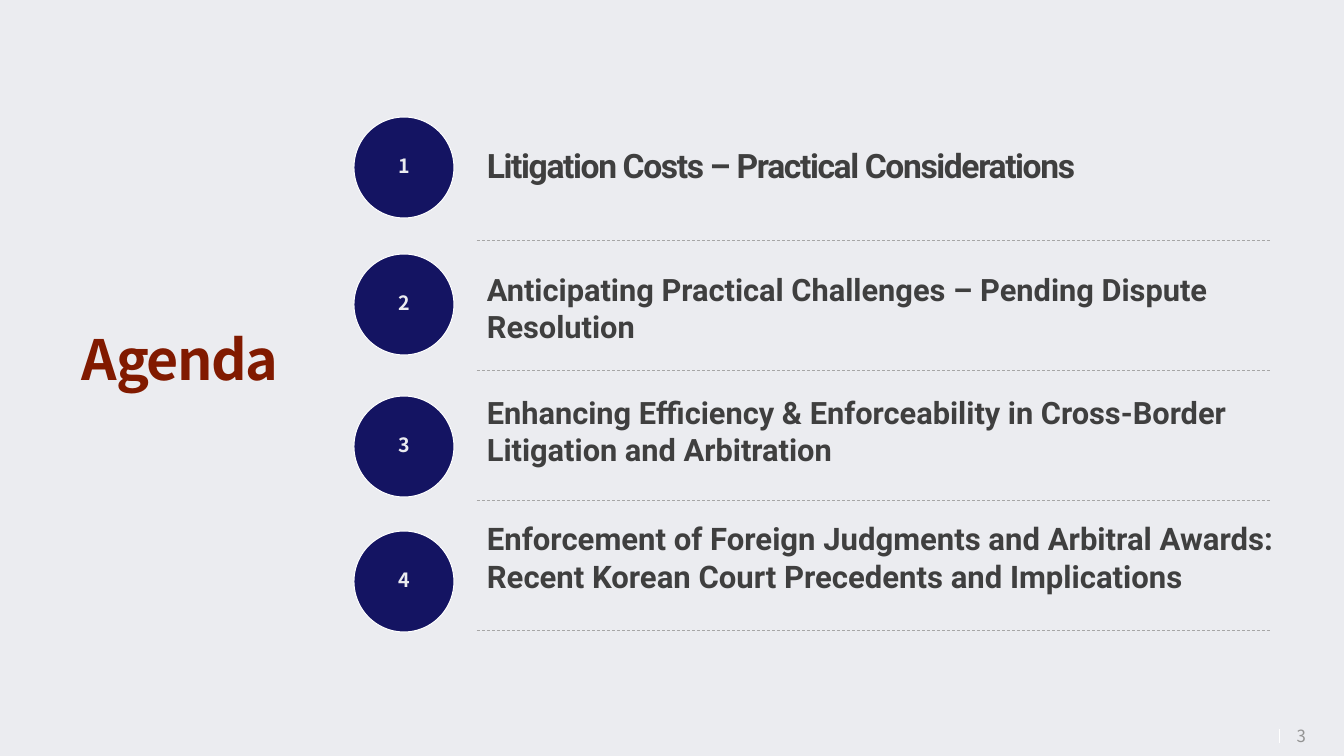
from lxml import etree
from pptx import Presentation
from pptx.dml.color import RGBColor
from pptx.enum.dml import MSO_LINE
from pptx.enum.shapes import MSO_CONNECTOR, MSO_SHAPE
from pptx.enum.text import MSO_ANCHOR, PP_ALIGN
from pptx.oxml.ns import qn
from pptx.util import Pt

PX = 914400 / 100.8
HEADING_FONT, TOPIC_FONT = "Noto Sans CJK KR", "Roboto"
BACKGROUND = RGBColor(0xEB, 0xEC, 0xF0)
WHITE = RGBColor(0xFF, 0xFF, 0xFF)
NAVY = RGBColor(0x14, 0x14, 0x62)
MAROON = RGBColor(0x81, 0x1A, 0x00)
DARK_GREY = RGBColor(0x3F, 0x3F, 0x3F)
RULE_GREY = RGBColor(0xA6, 0xA6, 0xA6)
PAGE_GREY = RGBColor(0x93, 0x93, 0x93)
DASH = MSO_LINE.DASH
STRAIGHT = MSO_CONNECTOR.STRAIGHT
OVAL = MSO_SHAPE.OVAL
TOP, MIDDLE = MSO_ANCHOR.TOP, MSO_ANCHOR.MIDDLE
LEFT, CENTER, RIGHT = PP_ALIGN.LEFT, PP_ALIGN.CENTER, PP_ALIGN.RIGHT


def px(*lengths):
    return [round(length * PX) for length in lengths]


def write(shape, text, font, size, color, bold=True, anchor=TOP, align=LEFT, spacing=0):
    """Fill a shape with one paragraph; spacing is in hundredths of a point."""
    frame = shape.text_frame
    frame.word_wrap = True
    frame.vertical_anchor = anchor
    paragraph = frame.paragraphs[0]
    paragraph.alignment = align
    run = paragraph.add_run()
    run.text = text
    paragraph.font.name = font
    paragraph.font.size = Pt(size)
    paragraph.font.bold = bold
    paragraph.font.color.rgb = color
    if spacing:
        run.font._element.set("spc", str(spacing))
    return paragraph


prs = Presentation()
prs.slide_width, prs.slide_height = px(1344, 756)
slide = prs.slides.add_slide(prs.slide_layouts[6])
slide.background.fill.solid()
slide.background.fill.fore_color.rgb = BACKGROUND
shapes = slide.shapes

# Dashed rules under the topics, and the short mark beside the page number
rules = [(477, 240 + 130 * row, 1270, 240 + 130 * row, RULE_GREY) for row in range(4)]
for x1, y1, x2, y2, color in rules + [(1279, 729, 1279, 743, WHITE)]:
    rule = shapes.add_connector(STRAIGHT, *px(x1, y1, x2, y2))
    rule.line.color.rgb = color
    rule.line.width = Pt(0.5)
    if color == RULE_GREY:
        rule.line.dash_style = DASH
    etree.SubElement(rule._element.spPr, qn("a:effectLst"))

title = shapes.add_textbox(*px(72, 323, 310, 78))
write(title, "Agenda", HEADING_FONT, 39.6, MAROON, anchor=MIDDLE, spacing=-100).line_spacing = 0.93

page_number = shapes.add_textbox(*px(1286, 729, 20, 14))
page_number.text_frame.margin_left = page_number.text_frame.margin_right = 0
page_number.text_frame.margin_top = page_number.text_frame.margin_bottom = 0
write(page_number, "3", HEADING_FONT, 12, PAGE_GREY, bold=False, anchor=MIDDLE, align=RIGHT)

# Circle top, text top, text width, text height, font size, letter spacing, topic
agenda = [
    (117, 140, 817, 54, 24, -100, "Litigation Costs – Practical Considerations"),
    (254, 266, 843, 101, 22, 0, "Anticipating Practical Challenges – Pending Dispute Resolution"),
    (396, 389, 843, 101, 22, 0,
     "Enhancing Efficiency & Enforceability in Cross-Border Litigation and Arbitration"),
    (531, 515, 867, 117, 22.2, 0,
     "Enforcement of Foreign Judgments and Arbitral Awards: "
     "Recent Korean Court Precedents and Implications"),
]
for number, (circle_top, top, width, height, size, spacing, topic) in enumerate(agenda, 1):
    circle = shapes.add_shape(OVAL, *px(354, circle_top, 100, 101))
    circle.shadow.inherit = False
    circle.fill.solid()
    circle.fill.fore_color.rgb = NAVY
    circle.line.color.rgb = WHITE
    circle.line.width = Pt(0.75)
    write(circle, str(number), HEADING_FONT, 14, BACKGROUND,
          anchor=MIDDLE, align=CENTER).line_spacing = 0.9

    topic_box = shapes.add_textbox(*px(477, top, width, height))
    write(topic_box, topic, TOPIC_FONT, size, DARK_GREY, spacing=spacing).space_after = Pt(6)

prs.save("out.pptx")
